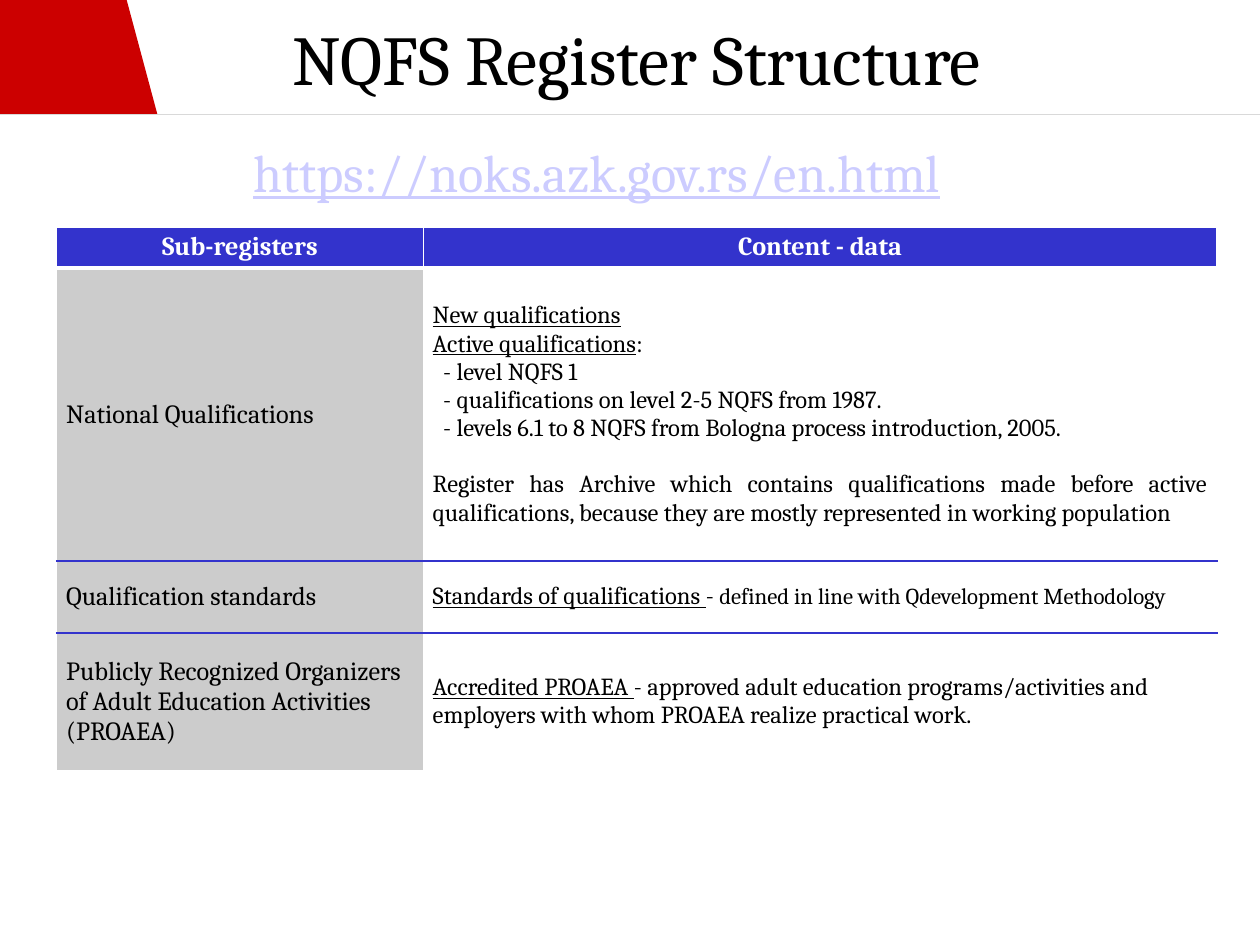
"""Build the NQFS register structure slide."""
from dataclasses import dataclass

import lxml.etree
import pptx
import pptx.dml.color
import pptx.enum.shapes
import pptx.enum.text
import pptx.oxml.ns
import pptx.util

FONT = "Cambria"
RED, BLUE, GRAY, WHITE, BLACK = "CC0000", "3333CC", "CCCCCC", "FFFFFF", "000000"
ALIGN = pptx.enum.text.PP_ALIGN
ANCHOR = pptx.enum.text.MSO_ANCHOR
SHAPE = pptx.enum.shapes.MSO_SHAPE
Pt = pptx.util.Pt


@dataclass
class Run:
    text: str
    size: float = 14
    underline: bool = False
    bold: bool = False
    color: str = BLACK


@dataclass
class Paragraph:
    runs: list[Run]
    align: ALIGN = ALIGN.LEFT
    indent: float = 0
    space_before: float = 0


@dataclass
class Edge:
    color: str = WHITE
    width: float = 1


@dataclass
class Row:
    height: float
    cells: list[list[Paragraph]]
    fills: tuple[str | None, str | None]
    top: Edge
    bottom: Edge
    anchor: ANCHOR = ANCHOR.MIDDLE


def rgb(color: str) -> pptx.dml.color.RGBColor:
    return pptx.dml.color.RGBColor.from_string(color)


def write_text(text_frame, paragraphs: list[Paragraph]) -> None:
    for index, item in enumerate(paragraphs):
        paragraph = text_frame.paragraphs[0] if index == 0 else text_frame.add_paragraph()
        paragraph.alignment = item.align
        if item.indent:
            properties = paragraph._p.get_or_add_pPr()
            properties.set("marL", str(Pt(item.indent)))
            properties.set("indent", "0")
        if item.space_before:
            paragraph.space_before = Pt(item.space_before)
        for part in item.runs:
            run = paragraph.add_run()
            run.text = part.text
            run.font.name = FONT
            run.font.size = Pt(part.size)
            run.font.bold = part.bold
            run.font.underline = part.underline
            run.font.color.rgb = rgb(part.color)


def set_border(cell, side: str, edge: Edge) -> None:
    properties = cell._tc.get_or_add_tcPr()
    line = lxml.etree.SubElement(
        properties, pptx.oxml.ns.qn(f"a:ln{side}"), w=str(Pt(edge.width)))
    fill = lxml.etree.SubElement(line, pptx.oxml.ns.qn("a:solidFill"))
    lxml.etree.SubElement(fill, pptx.oxml.ns.qn("a:srgbClr"), val=edge.color)


def add_banner_shape(slide, kind: SHAPE, left: float, width: float) -> None:
    shape = slide.shapes.add_shape(kind, Pt(left), Pt(-1.5), Pt(width), Pt(67))
    shape.shadow.inherit = False
    shape.fill.solid()
    shape.fill.fore_color.rgb = rgb(RED)
    shape.line.fill.background()


def add_rule(slide, top: float, length: float) -> None:
    rule = slide.shapes.add_connector(
        pptx.enum.shapes.MSO_CONNECTOR.STRAIGHT, 0, Pt(top), Pt(length), Pt(top))
    rule.line.color.rgb = rgb("D9D9D9")
    rule.line.width = Pt(0.75)
    lxml.etree.SubElement(rule._element.spPr, pptx.oxml.ns.qn("a:effectLst"))


def add_register_table(slide, rows: list[Row], widths: tuple[float, ...]) -> None:
    height = sum(row.height for row in rows)
    table = slide.shapes.add_table(
        len(rows), len(widths), Pt(32.4), Pt(129.6), Pt(sum(widths)), Pt(height)).table
    table.horz_banding = False
    for column, width in zip(table.columns, widths):
        column.width = Pt(width)
    for table_row, row in zip(table.rows, rows):
        table_row.height = Pt(row.height)
        for cell, paragraphs, fill in zip(table_row.cells, row.cells, row.fills):
            cell.margin_left = cell.margin_right = Pt(5.4)
            cell.margin_top = cell.margin_bottom = Pt(2.7)
            cell.vertical_anchor = row.anchor
            for side, edge in zip("LRTB", (Edge(), Edge(), row.top, row.bottom)):
                set_border(cell, side, edge)
            if fill:
                cell.fill.solid()
                cell.fill.fore_color.rgb = rgb(fill)
            else:
                cell.fill.background()
            write_text(cell.text_frame, paragraphs)


def heading(text: str) -> list[Paragraph]:
    return [Paragraph([Run(text, 15, bold=True, color=WHITE)], ALIGN.CENTER)]


def register_name(text: str) -> list[Paragraph]:
    return [Paragraph([Run(text, 15)])]


def level_item(text: str) -> Paragraph:
    return Paragraph([Run(text)], indent=6)


def register_rows() -> list[Row]:
    qualifications = [
        Paragraph([Run("New qualifications", underline=True)]),
        Paragraph([Run("Active qualifications", underline=True), Run(":")]),
        level_item("- level NQFS 1"),
        level_item("- qualifications on level 2-5 NQFS from 1987."),
        level_item("- levels 6.1 to 8 NQFS from Bologna process introduction, 2005."),
        Paragraph([Run("Register has Archive which contains qualifications made before active "
                       "qualifications, because they are mostly represented in working "
                       "population")], ALIGN.JUSTIFY, space_before=16),
    ]
    standards = [Paragraph([
        Run("Standards of qualifications ", underline=True), Run("- "),
        Run("defined in line with Qdevelopment Methodology", 13)])]
    organizers = [Paragraph([
        Run("Accredited PROAEA ", underline=True),
        Run("- approved adult education programs/activities and employers "
            "with whom PROAEA realize practical work.")])]
    thick, divider, body_fills = Edge(width=3), Edge(BLUE), (GRAY, None)
    return [
        Row(23.5, [heading("Sub-registers"), heading("Content - data")],
            (BLUE, BLUE), Edge(), thick, ANCHOR.TOP),
        Row(167.5, [register_name("National Qualifications"), qualifications],
            body_fills, thick, divider),
        Row(41, [register_name("Qualification standards"), standards],
            body_fills, divider, divider),
        Row(79, [register_name("Publicly Recognized Organizers of Adult Education "
                               "Activities (PROAEA)"), organizers],
            body_fills, divider, Edge()),
    ]


def main() -> None:
    presentation = pptx.Presentation()
    presentation.slide_width, presentation.slide_height = Pt(720), Pt(540)
    slide = presentation.slides.add_slide(presentation.slide_layouts[5])

    add_banner_shape(slide, SHAPE.ISOSCELES_TRIANGLE, 54, 36)
    add_banner_shape(slide, SHAPE.RECTANGLE, 0, 72)
    add_rule(slide, 65.5, 720)

    title = slide.shapes.title
    title.left, title.top, title.width, title.height = Pt(80), Pt(0), Pt(560), Pt(66)
    title.text_frame.vertical_anchor = ANCHOR.MIDDLE
    write_text(title.text_frame, [
        Paragraph([Run("NQFS Register Structure", 40)], ALIGN.CENTER, indent=7.2)])

    add_register_table(slide, register_rows(), (209.5, 453.5))

    address = slide.shapes.add_textbox(Pt(137.5), Pt(76.5), Pt(425.5), Pt(44))
    address.text_frame.word_wrap = False
    write_text(address.text_frame, [
        Paragraph([Run("https://noks.azk.gov.rs/en.html", 30, True, color="CCCCFF")])])

    presentation.save("out.pptx")


if __name__ == "__main__":
    main()
